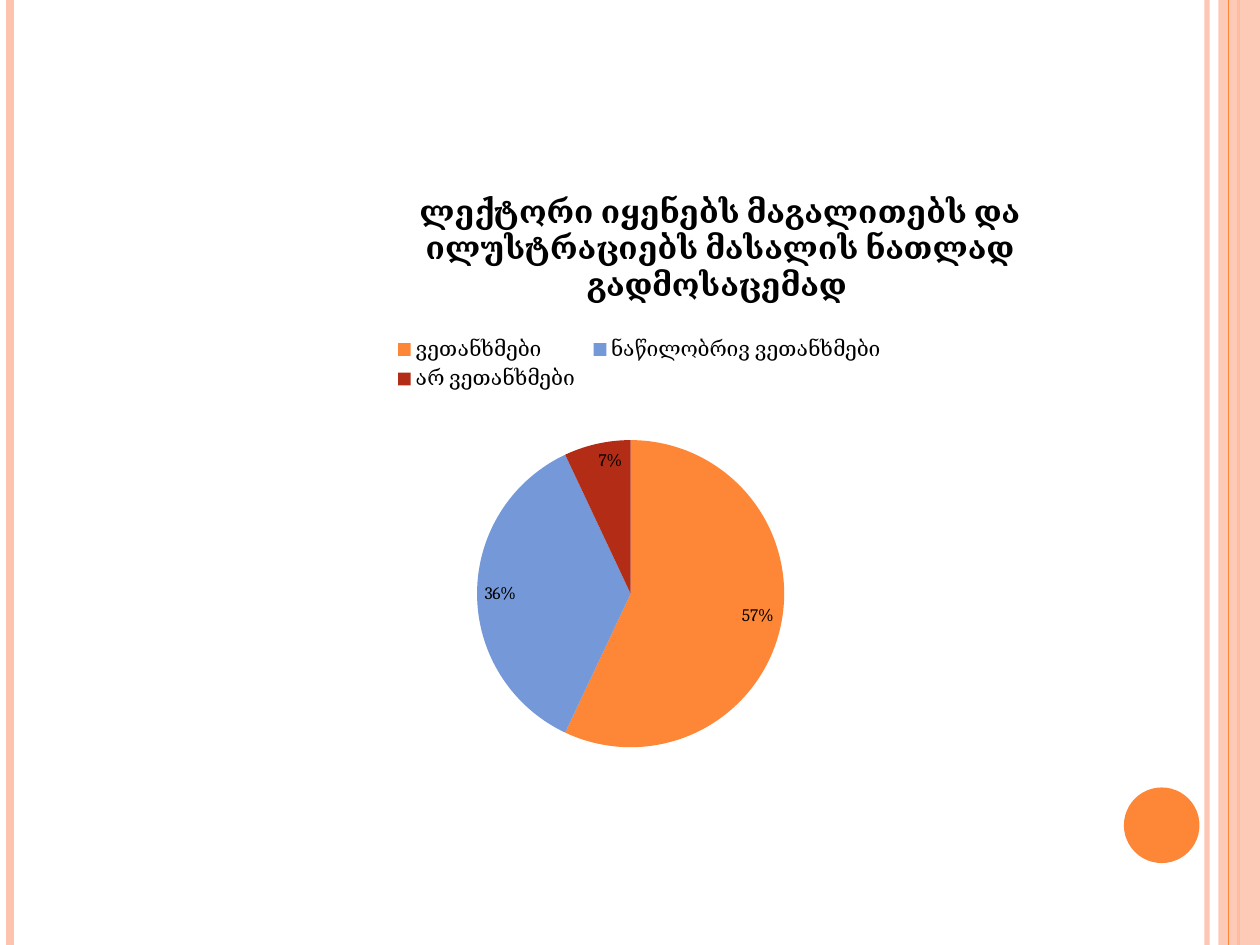
"""Build a slide with a pie chart of answers about lecture examples."""
from lxml.etree import SubElement
from pptx import Presentation
from pptx.chart.data import CategoryChartData as Data
from pptx.dml.color import RGBColor
from pptx.enum.chart import XL_CHART_TYPE as Kind, XL_LABEL_POSITION as Spot
from pptx.enum.chart import XL_LEGEND_POSITION as Side
from pptx.enum.shapes import MSO_CONNECTOR as Link, MSO_SHAPE as Form
from pptx.oxml import parse_xml
from pptx.oxml.ns import nsdecls, qn
from pptx.util import Inches, Pt

ORANGE = RGBColor(0xFE, 0x86, 0x37)
PEACH = RGBColor(0xFE, 0xC3, 0xAE)
BLUE = RGBColor(0x75, 0x98, 0xD9)
RED = RGBColor(0xB3, 0x2C, 0x16)
BLACK = RGBColor(0, 0, 0)


def fade(fill, amount):
    color = fill._xPr.find(qn("a:solidFill"))[0]
    SubElement(color, qn("a:alpha")).set("val", str(amount * 1000))


def place(part, index, **box):
    for old in part.findall(qn("c:layout")):
        part.remove(old)
    modes = '<c:xMode val="edge"/><c:yMode val="edge"/>'
    sizes = "".join(f'<c:{key} val="{val}"/>' for key, val in box.items())
    part.insert(index, parse_xml(
        f'<c:layout {nsdecls("c")}><c:manualLayout>{modes}{sizes}'
        '</c:manualLayout></c:layout>'))


deck = Presentation()
deck.slide_width, deck.slide_height = Inches(10), Inches(7.5)
slide = deck.slides.add_slide(deck.slide_layouts[6])
shapes = slide.shapes

stripes = [(9.58, PEACH, 3, 93), (0.08, PEACH, 4.5, 100),
           (9.83, ORANGE, 1.5, 100), None, (9.75, ORANGE, 0.75, 100)]
for stripe in stripes:
    if stripe is None:
        band = shapes.add_shape(Form.RECTANGLE, Inches(9.67), 0,
                                Inches(0.33), Inches(7.5))
        band.shadow.inherit = False
        band.fill.solid()
        band.fill.fore_color.rgb = PEACH
        fade(band.fill, 87)
        band.line.fill.background()
        continue
    left, color, width, alpha = stripe
    line = shapes.add_connector(Link.STRAIGHT, Inches(left), 0,
                                Inches(left), Inches(7.5))
    line.line.color.rgb = color
    line.line.width = Pt(width)
    if alpha < 100:
        fade(line.line.fill, alpha)
    SubElement(line._element.spPr, qn("a:effectLst"))

dot = shapes.add_shape(Form.OVAL, Inches(8.92), Inches(6.25),
                       Inches(0.6), Inches(0.6))
dot.shadow.inherit = False
dot.fill.solid()
dot.fill.fore_color.rgb = ORANGE
dot.line.fill.background()

data = Data()
data.categories = ["ვეთანხმები", "ნაწილობრივ ვეთანხმები", "არ ვეთანხმები"]
data.add_series("Series 1", (57, 36, 7))
chart = shapes.add_chart(Kind.PIE, Inches(1.42), Inches(1.42),
                         Inches(7.17), Inches(4.67), data).chart
chart.font.name = "Cambria"
chart.font.size = Pt(10)
chart.font.color.rgb = BLACK

chart.has_title = True
title = chart.chart_title
run = title.text_frame.paragraphs[0].add_run()
run.text = "ლექტორი იყენებს მაგალითებს და ილუსტრაციებს მასალის ნათლად გადმოსაცემად "
run.font.name = "Cambria"
run.font.size = Pt(18)
run.font.bold = True
run.font.color.rgb = BLACK
place(title._element, 1, x=0.26, y=0.01)

chart.has_legend = True
legend = chart.legend
legend.position = Side.TOP
legend.include_in_layout = False
legend.font.name = "Cambria"
legend.font.size = Pt(12)
legend.font.color.rgb = BLACK
place(legend._element, 1, x=0.23, y=0.26, w=0.56, h=0.11)

plot = chart.plots[0]
plot.vary_by_categories = True
for index, color in enumerate((ORANGE, BLUE, RED)):
    fill = plot.series[0].points[index].format.fill
    fill.solid()
    fill.fore_color.rgb = color
plot.has_data_labels = True
labels = plot.data_labels
labels.show_value = False
labels.show_percentage = True
labels.number_format = "0%"
labels.number_format_is_linked = False
labels.position = Spot.INSIDE_END
labels.font.name = "Cambria"
labels.font.size = Pt(10)
labels.font.color.rgb = BLACK
area = chart._chartSpace.chart.plotArea
place(area, 0, x=0.33, y=0.44, w=0.34, h=0.53)

deck.save("out.pptx")
